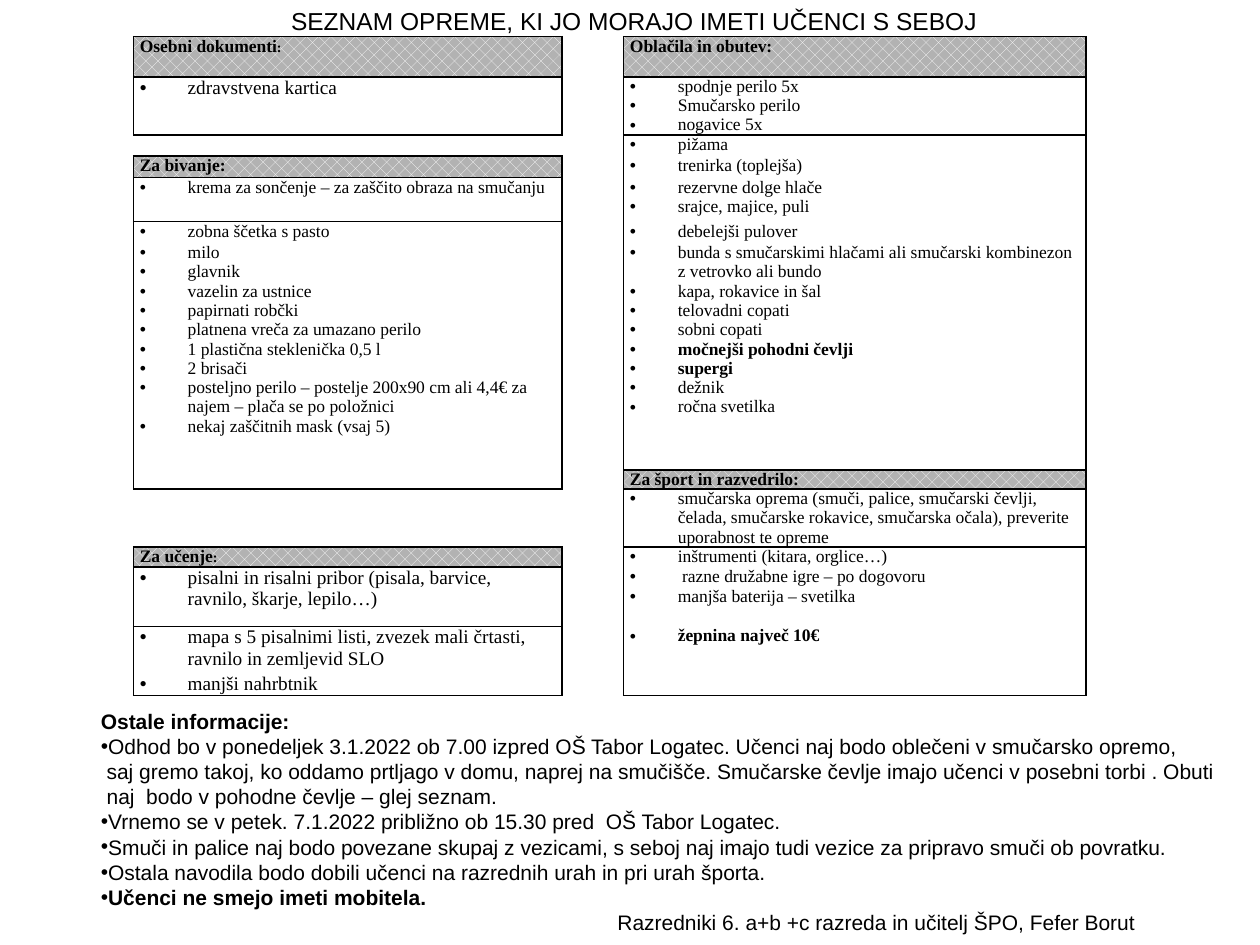
import pptx
import pptx.dml.color
import pptx.enum.dml
import pptx.enum.text
import pptx.util
from lxml import etree
from pptx.oxml.ns import qn
from pptx.util import Inches

COLORS = {"ink": "000000", "paper": "FFFFFF", "heading": "B2B2B2"}
NO_GRID_STYLE = "{2D5ABB26-0587-4C30-8999-92F81FD0307C}"
COLUMN_WIDTHS = [3.4, 0.49, 3.67]
ROW_HEIGHTS = [0.32, 0.46, 0.17, 0.17, 0.35, 0.17, 1.68, 0.12, 0.15, 0.46, 0.16, 0.47, 0.37, 0.18]

# Each section: column, heading row, heading, small suffix, text size, list per row below
SECTIONS = [
    (0, 0, "Osebni dokumenti", ":", 11, [["zdravstvena kartica"]]),
    (0, 3, "Za bivanje:", "", 10, [
        ["krema za sončenje – za zaščito obraza na smučanju"],
        ["zobna ščetka s pasto"],
        ["milo", "glavnik", "vazelin za ustnice", "papirnati robčki",
         "platnena vreča za umazano perilo", "1 plastična steklenička 0,5 l", "2 brisači",
         "posteljno perilo – postelje 200x90 cm ali 4,4€ za najem – plača se po položnici",
         "nekaj zaščitnih mask (vsaj 5)"],
        [], []]),
    (0, 10, "Za učenje", ":", 11, [
        ["pisalni in risalni pribor (pisala, barvice, ravnilo, škarje, lepilo…)"],
        ["mapa s 5 pisalnimi listi, zvezek mali črtasti, ravnilo in zemljevid SLO"],
        ["manjši nahrbtnik"]]),
    (2, 0, "Oblačila in obutev:", "", 10, [
        ["spodnje perilo 5x", "Smučarsko perilo", "nogavice 5x"],
        ["pižama"],
        ["trenirka (toplejša)"],
        ["rezervne dolge hlače", "srajce, majice, puli"],
        ["debelejši pulover"],
        ["bunda s smučarskimi hlačami ali smučarski kombinezon z vetrovko ali bundo",
         "kapa, rokavice in šal", "telovadni copati", "sobni copati",
         "močnejši pohodni čevlji", "supergi", "dežnik", "ročna svetilka"],
        []]),
    (2, 8, "Za šport in razvedrilo:", "", 10, [
        ["smučarska oprema (smuči, palice, smučarski čevlji, čelada, smučarske rokavice, "
         "smučarska očala), preverite uporabnost te opreme"],
        ["inštrumenti (kitara, orglice…)"],
        [" razne družabne igre – po dogovoru", "manjša baterija – svetilka"],
        ["žepnina največ 10€"],
        []]),
]
BOLD_ITEMS = {"močnejši pohodni čevlji", "supergi", "žepnina največ 10€"}

HEADING = {"bold": True}
BULLET = {"bullet": True}
INFORMATION = [
    ("Ostale informacije:", HEADING),
    ("Odhod bo v ponedeljek 3.1.2022 ob 7.00 izpred OŠ Tabor Logatec. "
     "Učenci naj bodo oblečeni v smučarsko opremo,", BULLET),
    (" saj gremo takoj, ko oddamo prtljago v domu, naprej na smučišče. "
     "Smučarske čevlje imajo učenci v posebni torbi . Obuti", {}),
    (" naj  bodo v pohodne čevlje – glej seznam.", {}),
    ("Vrnemo se v petek. 7.1.2022 približno ob 15.30 pred  OŠ Tabor Logatec.", BULLET),
    ("Smuči in palice naj bodo povezane skupaj z vezicami, s seboj naj imajo tudi "
     "vezice za pripravo smuči ob povratku.", BULLET),
    ("Ostala navodila bodo dobili učenci na razrednih urah in pri urah športa.", BULLET),
    ("Učenci ne smejo imeti mobitela.", {**BULLET, **HEADING}),
    ("Razredniki 6. a+b +c razreda in učitelj ŠPO, Fefer Borut", {"margin": 4.6, "indent": 0}),
]


def rgb(name):
    """Return a palette colour."""
    return pptx.dml.color.RGBColor.from_string(COLORS[name])


def add_run(paragraph, text, size=10, font="Times New Roman", bold=False):
    """Append a formatted run to a paragraph."""
    run = paragraph.add_run()
    run.text = text
    run.font.size = pptx.util.Pt(size)
    run.font.name = font
    run.font.bold = bold
    run.font.color.rgb = rgb("ink")


def format_paragraph(paragraph, margin=0, indent=0, bullet=False, tab=None):
    """Set spacing, indents, bullet and tab stop of a paragraph."""
    paragraph.space_before = pptx.util.Pt(0)
    properties = paragraph._p.get_or_add_pPr()
    properties.set("marL", str(Inches(margin)))
    properties.set("indent", str(Inches(indent)))
    if bullet:
        etree.SubElement(properties, qn("a:buFont"), typeface="Arial")
        etree.SubElement(properties, qn("a:buChar"), char="•")
    else:
        etree.SubElement(properties, qn("a:buNone"))
    if tab:
        stops = etree.SubElement(properties, qn("a:tabLst"))
        etree.SubElement(stops, qn("a:tab"), pos=str(Inches(tab)), algn="l")


def next_paragraph(frame, index):
    """Return the first paragraph of a frame or a new one."""
    return frame.paragraphs[0] if index == 0 else frame.add_paragraph()


def draw_borders(cell, sides):
    """Draw the given sides of a cell, in the order L, R, T, B."""
    properties = cell._tc.get_or_add_tcPr()
    for position, side in enumerate(sides):
        line = etree.Element(qn(f"a:ln{side}"), w=str(pptx.util.Pt(1)))
        fill = etree.SubElement(line, qn("a:solidFill"))
        etree.SubElement(fill, qn("a:srgbClr"), val=COLORS["ink"])
        properties.insert(position, line)


def fill_heading(cell, heading, suffix):
    """Write a section heading on a patterned ground."""
    paragraph = cell.text_frame.paragraphs[0]
    add_run(paragraph, heading, bold=True)
    if suffix:
        add_run(paragraph, suffix, size=8, bold=True)
    cell.fill.patterned()
    cell.fill.pattern = pptx.enum.dml.MSO_PATTERN.PERCENT_30
    cell.fill.fore_color.rgb = rgb("paper")
    cell.fill.back_color.rgb = rgb("heading")
    draw_borders(cell, "LRTB")


def fill_items(cell, items, size):
    """Write a bulleted list in a cell."""
    for index, item in enumerate(items):
        paragraph = next_paragraph(cell.text_frame, index)
        format_paragraph(paragraph, margin=0.38, indent=-0.38, bullet=True)
        add_run(paragraph, item, size=size, bold=item in BOLD_ITEMS)


def add_equipment(slide):
    """Add the table of equipment sections."""
    frame = slide.shapes.add_table(
        len(ROW_HEIGHTS), len(COLUMN_WIDTHS), Inches(1.06), Inches(0.29),
        Inches(sum(COLUMN_WIDTHS)), Inches(sum(ROW_HEIGHTS)))
    equipment = frame.table
    equipment.first_row = equipment.horz_banding = False
    equipment._tbl.tblPr.find(qn("a:tableStyleId")).text = NO_GRID_STYLE
    for column, width in zip(equipment.columns, COLUMN_WIDTHS):
        column.width = Inches(width)
    for row, height in zip(equipment.rows, ROW_HEIGHTS):
        row.height = Inches(height)
    for cell in equipment.iter_cells():
        cell.margin_left = cell.margin_right = Inches(0.05)
        cell.margin_top = cell.margin_bottom = 0
        cell.fill.background()
    for column, top, heading, suffix, size, lists in SECTIONS:
        fill_heading(equipment.cell(top, column), heading, suffix)
        for offset, items in enumerate(lists, 1):
            cell = equipment.cell(top + offset, column)
            fill_items(cell, items, size)
            draw_borders(cell, "LR" + "T" * (offset == 1) + "B" * (offset == len(lists)))
    for cell in equipment.iter_cells():
        if not cell.text:
            etree.SubElement(cell.text_frame.paragraphs[0]._p, qn("a:endParaRPr"), sz="100")


def place(placeholder, left, top, width, height, anchor):
    """Move a placeholder and return its text frame."""
    placeholder.left, placeholder.top = Inches(left), Inches(top)
    placeholder.width, placeholder.height = Inches(width), Inches(height)
    frame = placeholder.text_frame
    frame.word_wrap = True
    frame.auto_size = pptx.enum.text.MSO_AUTO_SIZE.NONE
    frame.vertical_anchor = anchor
    return frame


def add_title(slide):
    """Write the slide title."""
    frame = place(slide.shapes.title, 0.43, 0, 9.21, 0.34, pptx.enum.text.MSO_ANCHOR.TOP)
    paragraph = frame.paragraphs[0]
    paragraph.alignment = pptx.enum.text.PP_ALIGN.CENTER
    add_run(paragraph, "SEZNAM OPREME, KI JO MORAJO IMETI UČENCI S SEBOJ", size=14, font="Arial")


def add_information(slide):
    """Write the remaining information below the table."""
    body = slide.placeholders[1]
    frame = place(body, 0.2, 5.56, 9.8, 1.92, pptx.enum.text.MSO_ANCHOR.MIDDLE)
    body.fill.solid()
    body.fill.fore_color.rgb = rgb("paper")
    for index, (text, style) in enumerate(INFORMATION):
        paragraph = next_paragraph(frame, index)
        layout = {"indent": 0.5, "tab": 0.25, **style}
        bold = layout.pop("bold", False)
        format_paragraph(paragraph, **layout)
        add_run(paragraph, text, size=12, font="Arial", bold=bold)


def main():
    """Build and save the slide."""
    deck = pptx.Presentation()
    deck.slide_width, deck.slide_height = Inches(10), Inches(7.5)
    slide = deck.slides.add_slide(deck.slide_layouts[1])
    add_equipment(slide)
    add_information(slide)
    add_title(slide)
    deck.save("out.pptx")


if __name__ == "__main__":
    main()
